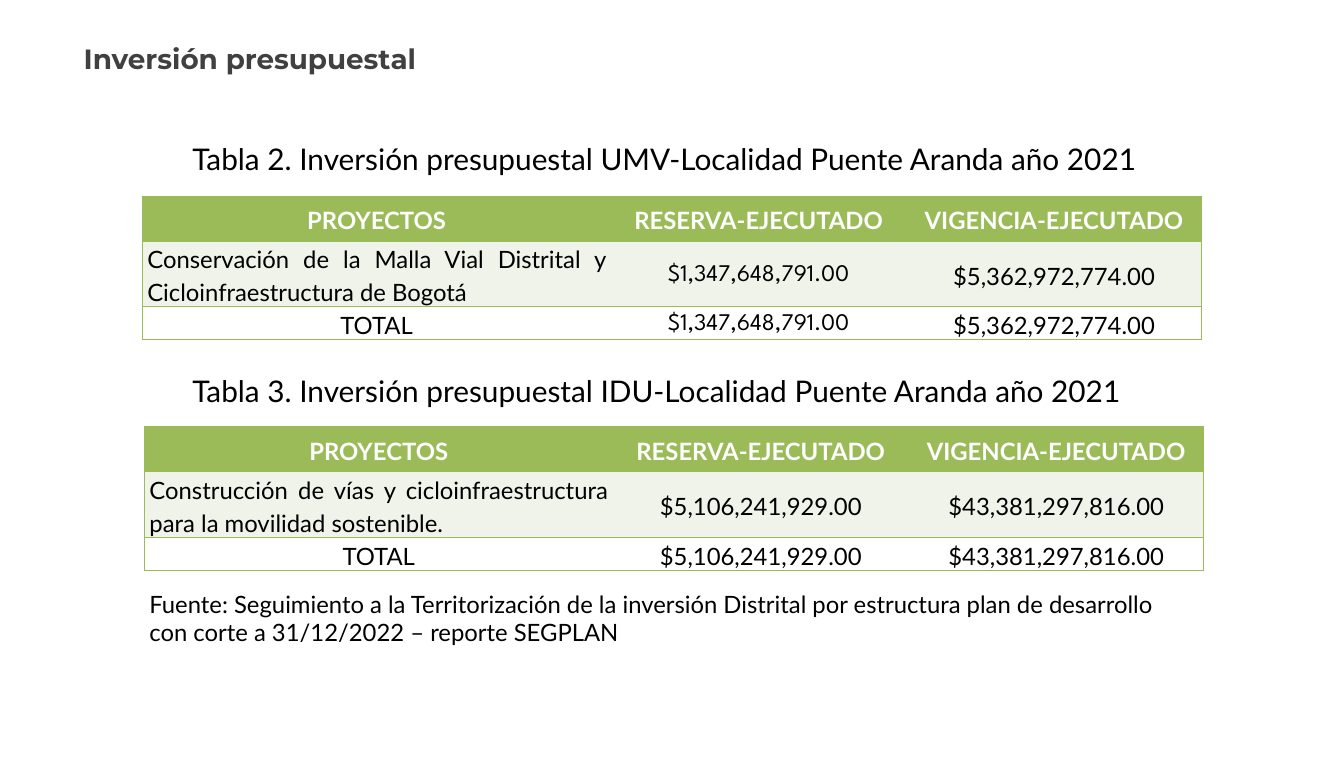
import pptx
import pptx.dml.color
import pptx.enum.text
import pptx.oxml
import pptx.oxml.ns
import pptx.util

RGB = pptx.dml.color.RGBColor
ALIGN = pptx.enum.text.PP_ALIGN
ANCHOR = pptx.enum.text.MSO_ANCHOR

# Colours
GREEN = RGB(0x9B, 0xBB, 0x59)
PALE = RGB(0xEF, 0xF3, 0xEA)
WHITE = RGB(0xFF, 0xFF, 0xFF)
BLACK = RGB(0, 0, 0)
GREY = RGB(0x40, 0x40, 0x40)

# Content
TITLE = "Inversión presupuestal"
HEADS = ["PROYECTOS", "RESERVA-EJECUTADO", "VIGENCIA-EJECUTADO"]
TABLES = [
    {
        "name": "Tabla 2. Inversión presupuestal UMV-Localidad Puente Aranda año 2021",
        "work": "Conservación de la Malla Vial Distrital y Cicloinfraestructura de Bogotá",
        "sums": ["$1,347,648,791.00", "$5,362,972,774.00"],
        "fonts": ["League Spartan", "Lato"],
        "head": (259, 192, 1357, 61),
        "grid": (199, 274),
    },
    {
        "name": "Tabla 3. Inversión presupuestal IDU-Localidad Puente Aranda año 2021",
        "work": "Construcción de vías y cicloinfraestructura para la movilidad sostenible.",
        "sums": ["$5,106,241,929.00", "$43,381,297,816.00"],
        "fonts": ["Lato", "Lato"],
        "head": (259, 516, 1345, 61),
        "grid": (202, 596),
    },
]
SOURCE = ("Fuente: Seguimiento a la Territorización de la inversión Distrital "
          "por estructura plan de desarrollo con corte a 31/12/2022 – reporte SEGPLAN")

# Lengths in px, 100 to the inch
SCALE = 9144
SIZE = (1879, 1061)
TITLE_BOX = (117, 53, 1127, 57)
NOTE_BOX = (199, 819, 1480, 91)
COLS = [655, 413, 413]
ROWS = [63, 90, 33]
FILLS = [GREEN, PALE, WHITE]
INSET = 7

# Formats
HEAD = {"size": pptx.util.Pt(24), "name": "Lato", "bold": True, "color": WHITE}
BODY = HEAD | {"bold": False, "color": BLACK}
NAME = BODY | {"size": pptx.util.Pt(30)}
TOP = {"size": pptx.util.Pt(28), "name": "Montserrat", "bold": True, "color": GREY}
PARA = {"line_spacing": 1.15, "space_after": pptx.util.Pt(10)}
CELL = {"margin_left": INSET * SCALE, "margin_right": INSET * SCALE,
        "margin_top": 0, "margin_bottom": 0}
NO_PAD = {"margin_left": 0, "margin_right": 0, "margin_top": 0, "margin_bottom": 0}


def emu(box):
    return [n * SCALE for n in box]


def put(item, style):
    for key, val in style.items():
        if key == "color":
            item.color.rgb = val
        else:
            setattr(item, key, val)


def write(para, text, style):
    run = para.add_run()
    run.text = text
    put(run.font, style)


def add_text(slide, box, text, style, wrap):
    frame = slide.shapes.add_textbox(*emu(box)).text_frame
    frame.word_wrap = wrap
    write(frame.paragraphs[0], text, style)


def add_edges(cell, sides):
    props = cell._tc.get_or_add_tcPr()
    for side in "LRTB":
        paint = (f'<a:solidFill><a:srgbClr val="{GREEN}"/></a:solidFill>'
                 if side in sides else "<a:noFill/>")
        props.append(pptx.oxml.parse_xml(
            f'<a:ln{side} {pptx.oxml.ns.nsdecls("a")} w="12700">{paint}</a:ln{side}>'))


def add_grid(slide, data):
    box = (*data["grid"], sum(COLS), sum(ROWS))
    grid = slide.shapes.add_table(len(ROWS), len(COLS), *emu(box)).table
    grid.first_row = grid.horz_banding = False
    for col, wide in zip(grid.columns, COLS):
        col.width = wide * SCALE
    for row, high in zip(grid.rows, ROWS):
        row.height = high * SCALE

    texts = [HEADS, [data["work"], *data["sums"]], ["TOTAL", *data["sums"]]]
    fonts = ["Lato", *data["fonts"]]
    for r, line in enumerate(texts):
        for c, text in enumerate(line):
            cell = grid.cell(r, c)
            top = r > 0 and c == 0
            put(cell, CELL | {"vertical_anchor": ANCHOR.TOP if top else ANCHOR.MIDDLE})
            add_edges(cell, "TB" + ("L", "", "R")[c])
            cell.fill.solid()
            cell.fill.fore_color.rgb = FILLS[r]
            para = cell.text_frame.paragraphs[0]
            just = (r, c) == (1, 0)
            put(para, PARA | {"alignment": ALIGN.JUSTIFY if just else ALIGN.CENTER})
            write(para, text, HEAD if r == 0 else BODY | {"name": fonts[c]})


def main():
    deck = pptx.Presentation()
    deck.slide_width, deck.slide_height = emu(SIZE)
    slide = deck.slides.add_slide(deck.slide_layouts[5])

    # Title
    title = slide.shapes.title
    title.left, title.top, title.width, title.height = emu(TITLE_BOX)
    put(title.text_frame, NO_PAD | {"vertical_anchor": ANCHOR.MIDDLE, "word_wrap": True})
    para = title.text_frame.paragraphs[0]
    para.alignment = ALIGN.LEFT
    write(para, TITLE, TOP)

    # Tables with their captions
    for data in TABLES:
        add_text(slide, data["head"], data["name"], NAME, False)
        add_grid(slide, data)

    # Source note
    add_text(slide, NOTE_BOX, SOURCE, BODY, True)
    deck.save("out.pptx")


if __name__ == "__main__":
    main()
